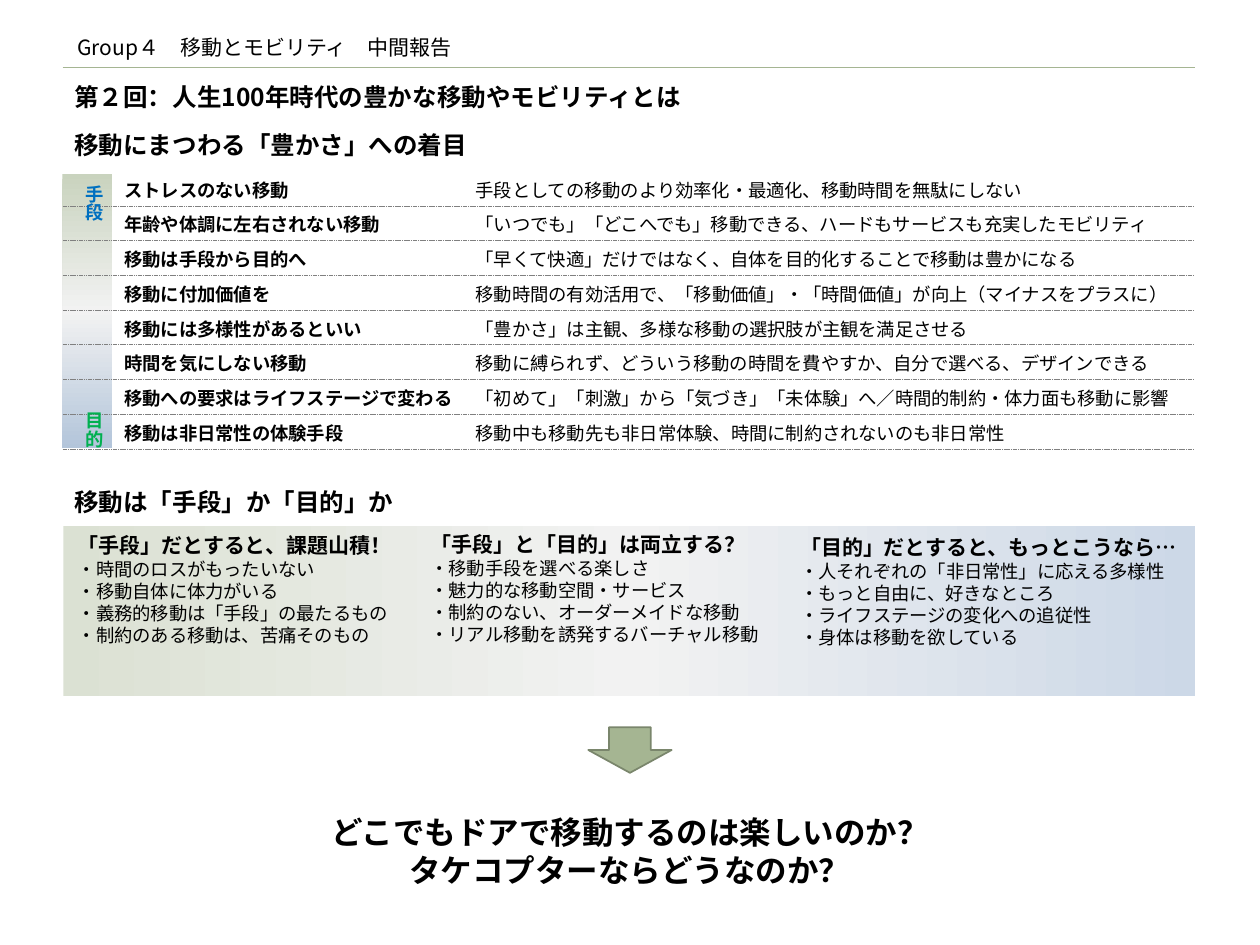
import copy
import pptx
import pptx.util
import pptx.dml.color
import pptx.enum.dml
import pptx.enum.shapes
import pptx.enum.text
import pptx.oxml.ns

Cm, Pt = pptx.util.Cm, pptx.util.Pt
SHAPE = pptx.enum.shapes.MSO_SHAPE
ALIGN = pptx.enum.text.PP_ALIGN
DASH = pptx.enum.dml.MSO_LINE
rgb = pptx.dml.color.RGBColor.from_string
qn = pptx.oxml.ns.qn
NOTO = "Noto Sans CJK JP"

deck = pptx.Presentation()
deck.slide_width, deck.slide_height = Cm(25.4), Cm(19.05)
page = deck.slides.add_slide(deck.slide_layouts[6])


def write(text, x, y, w, h, size=10.5, head=None, font=NOTO, color="000000",
          bold=False, align=ALIGN.LEFT, vert=False):
    """Add a text box in cm; head is the size of a bold first line."""
    box = page.shapes.add_textbox(Cm(x), Cm(y), Cm(w), Cm(h))
    frame = box.text_frame
    frame.word_wrap = False
    frame.auto_size = pptx.enum.text.MSO_AUTO_SIZE.SHAPE_TO_FIT_TEXT
    if vert:
        frame._txBody.bodyPr.set("vert", "eaVert")
    frame.text = text
    for i, para in enumerate(frame.paragraphs):
        top = head and i == 0
        para.alignment = align
        for run in para.runs:
            run.font.name = font
            run.font.size = Pt(head if top else size)
            run.font.bold = bool(bold or top)
            run.font.color.rgb = rgb(color)
            east = run.font._element.makeelement(qn("a:ea"), {"typeface": font})
            run.font._element.find(qn("a:latin")).addnext(east)


def rule(y, color, width, dash=None):
    """Draw a line across the page at y cm."""
    line = page.shapes.add_connector(
        pptx.enum.shapes.MSO_CONNECTOR.STRAIGHT, Cm(1.26), Cm(y), Cm(24.08), Cm(y))
    line.line.color.rgb = rgb(color)
    line.line.width = Pt(width)
    if dash:
        line.line.dash_style = dash
    props = line._element.spPr
    props.append(props.makeelement(qn("a:effectLst"), {}))


# Gradient panels: the wide one is a tall one turned on its side
for x, y, w, h, turn, tones in [
    (10.97, 0.91, 3.43, 22.81, 270, ("DBE1D3", "F2F2F2", "CCD8E7")),
    (1.26, 3.5, 1, 5.54, 0, ("C9D3BE", "F2F2F2", "B3C5DA")),
]:
    panel = page.shapes.add_shape(SHAPE.RECTANGLE, Cm(x), Cm(y), Cm(w), Cm(h))
    panel.rotation = turn
    panel.shadow.inherit = False
    panel.line.fill.background()
    panel.fill.gradient()
    panel.fill.gradient_angle = 270
    stops = panel._element.spPr.find(qn("a:gradFill")).find(qn("a:gsLst"))
    stops.insert(1, copy.deepcopy(stops[0]))
    for stop, tone, place in zip(panel.fill.gradient_stops, tones, (0, 0.5, 1)):
        stop.color.rgb = rgb(tone)
        stop.position = place

# Headings
write("Group４　移動とモビリティ　中間報告", 1.25, 0.58, 8.18, 0.77, size=12,
      align=ALIGN.CENTER)
rule(1.36, "A5B592", 0.5)
for text, y, w in [
    ("第２回：人生100年時代の豊かな移動やモビリティとは", 1.53, 13),
    ("移動にまつわる「豊かさ」への着目", 2.49, 8.48),
    ("移動は「手段」か「目的」か", 9.7, 6.98),
]:
    write(text, 1.25, y, w, 0.86, size=14, bold=True)

# Rows, from means to end
rows = [
    ("ストレスのない移動", "手段としての移動のより効率化・最適化、移動時間を無駄にしない"),
    ("年齢や体調に左右されない移動",
     "「いつでも」「どこへでも」移動できる、ハードもサービスも充実したモビリティ"),
    ("移動は手段から目的へ",
     "「早くて快適」だけではなく、自体を目的化することで移動は豊かになる"),
    ("移動に付加価値を",
     "移動時間の有効活用で、「移動価値」・「時間価値」が向上（マイナスをプラスに）"),
    ("移動には多様性があるといい", "「豊かさ」は主観、多様な移動の選択肢が主観を満足させる"),
    ("時間を気にしない移動",
     "移動に縛られず、どういう移動の時間を費やすか、自分で選べる、デザインできる"),
    ("移動への要求はライフステージで変わる",
     "「初めて」「刺激」から「気づき」「未体験」へ／時間的制約・体力面も移動に影響"),
    ("移動は非日常性の体験手段", "移動中も移動先も非日常体験、時間に制約されないのも非日常性"),
]
for i, (label, note) in enumerate(rows):
    y = 3.48 + 0.7 * i
    for text, x, font in [(label, 2.26, NOTO), (note, 9.34, "Arial")]:
        width = 0.53 + 0.37 * len(text)
        write(text, x, y, width, 0.7, font=font, bold=font == NOTO)
    rule(y + 0.67, "808080", 0.25, DASH.SQUARE_DOT)

for text, y, color in [("手段", 3.48, "0070C0"), ("目的", 8.05, "00B050")]:
    write(text, 1.27, y, 0.97, 1.02, color=color, bold=True, vert=True)

# Three views
for x, y, w, lines in [
    (1.32, 10.62, 6.93, ("「手段」だとすると、課題山積！", "・時間のロスがもったいない",
                         "・移動自体に体力がいる", "・義務的移動は「手段」の最たるもの",
                         "・制約のある移動は、苦痛そのもの")),
    (8.43, 10.6, 7.24, ("「手段」と「目的」は両立する？", "・移動手段を選べる楽しさ",
                        "・魅力的な移動空間・サービス", "・制約のない、オーダーメイドな移動",
                        "・リアル移動を誘発するバーチャル移動")),
    (15.88, 10.65, 8.2, ("「目的」だとすると、もっとこうなら…",
                         "・人それぞれの「非日常性」に応える多様性",
                         "・もっと自由に、好きなところ", "・ライフステージの変化への追従性",
                         "・身体は移動を欲している")),
]:
    write("\n".join(lines), x, y, w, 2.57, head=12)

# Closing question
arrow = page.shapes.add_shape(SHAPE.DOWN_ARROW, Cm(11.86), Cm(14.66), Cm(1.68), Cm(0.92))
arrow.shadow.inherit = False
arrow.fill.solid()
arrow.fill.fore_color.rgb = rgb("A5B592")
arrow.line.color.rgb = rgb("7A866C")
arrow.line.width = Pt(1)
write("どこでもドアで移動するのは楽しいのか？\nタケコプターならどうなのか？",
      6.35, 16.26, 12.7, 1.8, size=18, bold=True, align=ALIGN.CENTER)

deck.save("out.pptx")
